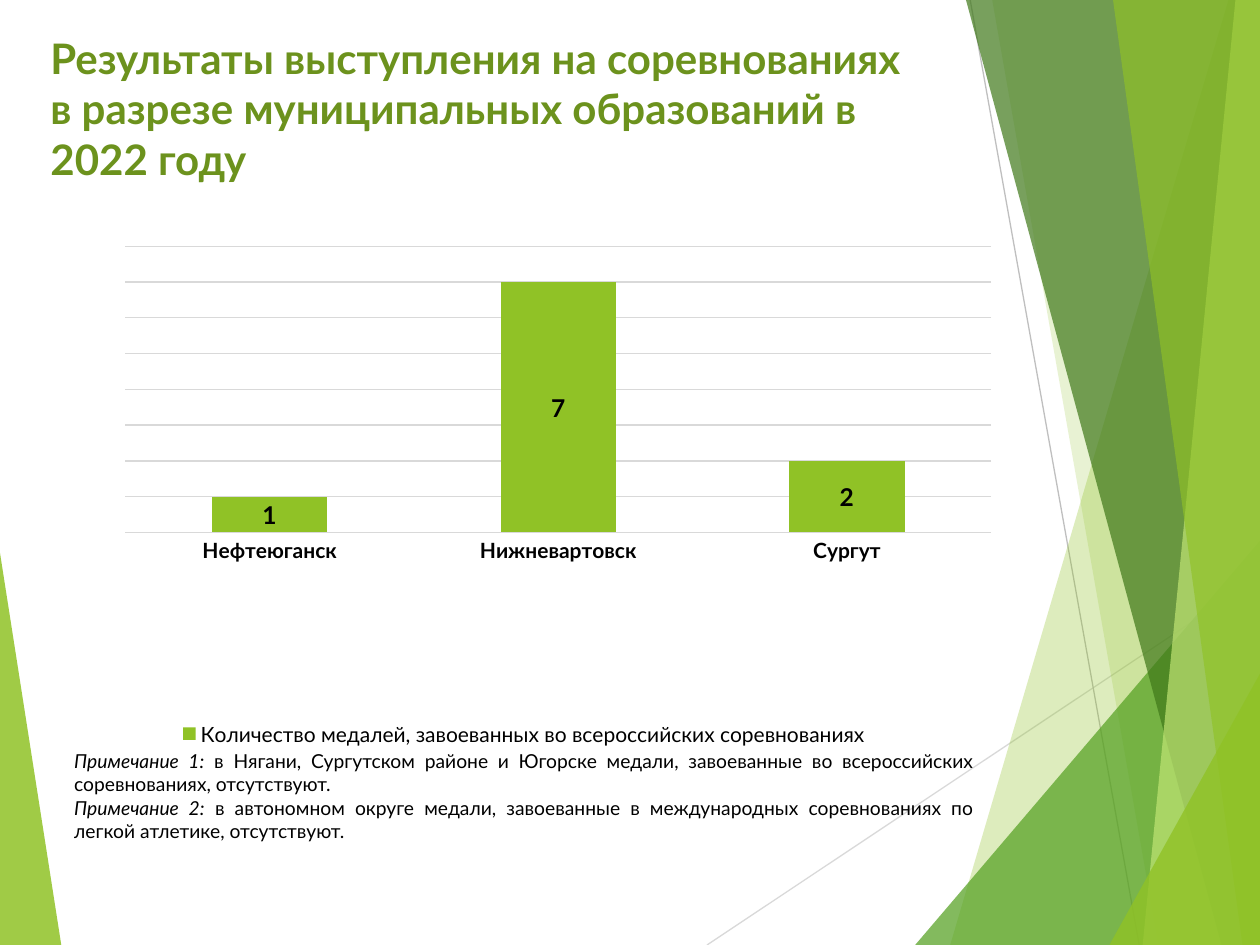
"""Build a slide with medal results by municipality, a column chart and two notes."""
from lxml import etree
from pptx import Presentation
from pptx.chart.data import CategoryChartData
from pptx.dml.color import RGBColor
from pptx.enum import chart as ch, shapes, text
from pptx.oxml import ns
from pptx.util import Pt

FONT = "Lato"
BLACK = RGBColor(0, 0, 0)
LIME = RGBColor(0x90, 0xC2, 0x26)
PALE_LIME = RGBColor(0xC0, 0xE4, 0x74)
GREEN = RGBColor(0x54, 0xA0, 0x21)
DARK_GREEN = RGBColor(0x3F, 0x78, 0x19)
OLIVE = RGBColor(0x6C, 0x92, 0x1D)
LIGHT_GRAY = RGBColor(0xD9, 0xD9, 0xD9)
GRAY = RGBColor(0xBF, 0xBF, 0xBF)

WIDTH, HEIGHT = 720, 540
TITLE = "Результаты выступления на соревнованиях в разрезе муниципальных образований в 2022 году"
SERIES = "Количество медалей, завоеванных во всероссийских соревнованиях"
MEDALS = {"Нефтеюганск": 1, "Нижневартовск": 7, "Сургут": 2}
NOTES = [
    ("Примечание 1:", " в Нягани, Сургутском районе и Югорске медали, завоеванные во всероссийских соревнованиях, отсутствуют."),
    ("Примечание 2:", " в автономном округе медали, завоеванные в международных соревнованиях по легкой атлетике, отсутствуют."),
]
LEFT_FACET = ([(0, 316), (35.3, HEIGHT), (0, HEIGHT)], LIME, 85)
RAYS = [((404, HEIGHT), (WIDTH, 329.5), LIGHT_GRAY), ((554.4, 0), (651, HEIGHT), GRAY)]


def band(top_x, bottom_x):
    return [(top_x, 0), (bottom_x, HEIGHT), (WIDTH, HEIGHT), (WIDTH, 0)]


def corner(bottom_x, right_y):
    return [(bottom_x, HEIGHT), (WIDTH, right_y), (WIDTH, HEIGHT)]


RIGHT_FACETS = [
    (band(702, 543), LIME, 30),
    (band(567.4, 661.7), LIME, 20),
    (corner(522.7, 309), GREEN, 72),
    (band(552.2, 698.4), DARK_GREEN, 70),
    (band(706.3, 653), PALE_LIME, 70),
    (band(636, 710), LIME, 65),
    (corner(634.5, 385), LIME, 80),
]


def style(font, color=BLACK, **values):
    for name, value in {"name": FONT, **values}.items():
        setattr(font, name, value)
    font.color.rgb = color


def add_facet(page, points, color, opacity):
    builder = page.shapes.build_freeform(*points[0], scale=Pt(1))
    builder.add_line_segments(points[1:])
    facet = builder.convert_to_shape()
    facet.shadow.inherit = False
    facet.line.fill.background()
    facet.fill.solid()
    facet.fill.fore_color.rgb = color
    fill = facet.fill._xPr.find(ns.qn("a:solidFill"))[0]
    etree.SubElement(fill, ns.qn("a:alpha"), val=str(opacity * 1000))


def add_ray(page, start, end, color):
    ends = [Pt(value) for value in start + end]
    ray = page.shapes.add_connector(shapes.MSO_CONNECTOR.STRAIGHT, *ends)
    ray.line.color.rgb, ray.line.width = color, Pt(0.75)
    etree.SubElement(ray._element.spPr, ns.qn("a:effectLst"))


def format_title(title):
    title.left, title.top, title.width, title.height = map(Pt, (21.6, 15, 514, 90))
    frame = title.text_frame
    frame.text = TITLE
    for name, value in {"word_wrap": True, "auto_size": text.MSO_AUTO_SIZE.NONE,
                        "vertical_anchor": text.MSO_ANCHOR.TOP}.items():
        setattr(frame, name, value)
    para = frame.paragraphs[0]
    para.alignment = text.PP_ALIGN.LEFT
    style(para.runs[0].font, OLIVE, size=Pt(24), bold=True)


def add_medal_chart(page):
    data = CategoryChartData()
    data.categories = list(MEDALS)
    data.add_series(SERIES, list(MEDALS.values()))
    chart = page.shapes.add_chart(ch.XL_CHART_TYPE.COLUMN_STACKED,
                                  *map(Pt, (21.6, 131.8, 556, 297.4)), data).chart
    style(chart.font, size=Pt(10))
    chart.has_title = False
    chart.has_legend = True
    chart.legend.position = ch.XL_LEGEND_POSITION.BOTTOM
    chart.legend.include_in_layout = False
    style(chart.legend.font, size=Pt(12))

    plot = chart.plots[0]
    for name, value in {"gap_width": 150, "overlap": 100, "vary_by_categories": False,
                        "has_data_labels": True}.items():
        setattr(plot, name, value)
    plot.data_labels.show_value = True
    plot.data_labels.position = ch.XL_LABEL_POSITION.CENTER
    style(plot.data_labels.font, size=Pt(14), bold=True)
    fill = plot.series[0].format.fill
    fill.solid()
    fill.fore_color.rgb = LIME

    cities, counts = chart.category_axis, chart.value_axis
    cities.major_tick_mark = ch.XL_TICK_MARK.NONE
    style(cities.tick_labels.font, size=Pt(12), bold=True)
    for name, value in {"visible": False, "minimum_scale": 0, "maximum_scale": 8,
                        "major_unit": 1, "has_major_gridlines": True}.items():
        setattr(counts, name, value)
    for line in (cities.format.line, counts.major_gridlines.format.line):
        line.color.rgb, line.width = LIGHT_GRAY, Pt(0.75)

    area = chart._chartSpace.chart.plotArea
    for old in area.findall(ns.qn("c:layout")):
        area.remove(old)
    layout = etree.Element(ns.qn("c:layout"))
    area.insert(0, layout)
    manual = etree.SubElement(layout, ns.qn("c:manualLayout"))
    for name, value in {"layoutTarget": "inner", "xMode": "edge", "yMode": "edge",
                        "x": 0.09, "y": 0.03, "w": 0.89, "h": 0.55}.items():
        etree.SubElement(manual, ns.qn(f"c:{name}"), val=str(value))


def add_notes(page):
    frame = page.shapes.add_textbox(*map(Pt, (35.3, 424.8, 528.5, 60.5))).text_frame
    frame.word_wrap = True
    for index, note in enumerate(NOTES):
        para = frame.add_paragraph() if index else frame.paragraphs[0]
        para.alignment = text.PP_ALIGN.JUSTIFY
        for wording, italic in zip(note, (True, False)):
            span = para.add_run()
            span.text = wording
            style(span.font, size=Pt(11), italic=italic)


def main():
    deck = Presentation()
    deck.slide_width, deck.slide_height = Pt(WIDTH), Pt(HEIGHT)
    page = deck.slides.add_slide(deck.slide_layouts[5])
    add_facet(page, *LEFT_FACET)
    for ray in RAYS:
        add_ray(page, *ray)
    for facet in RIGHT_FACETS:
        add_facet(page, *facet)
    format_title(page.shapes.title)
    add_medal_chart(page)
    add_notes(page)
    deck.save("out.pptx")


if __name__ == "__main__":
    main()
